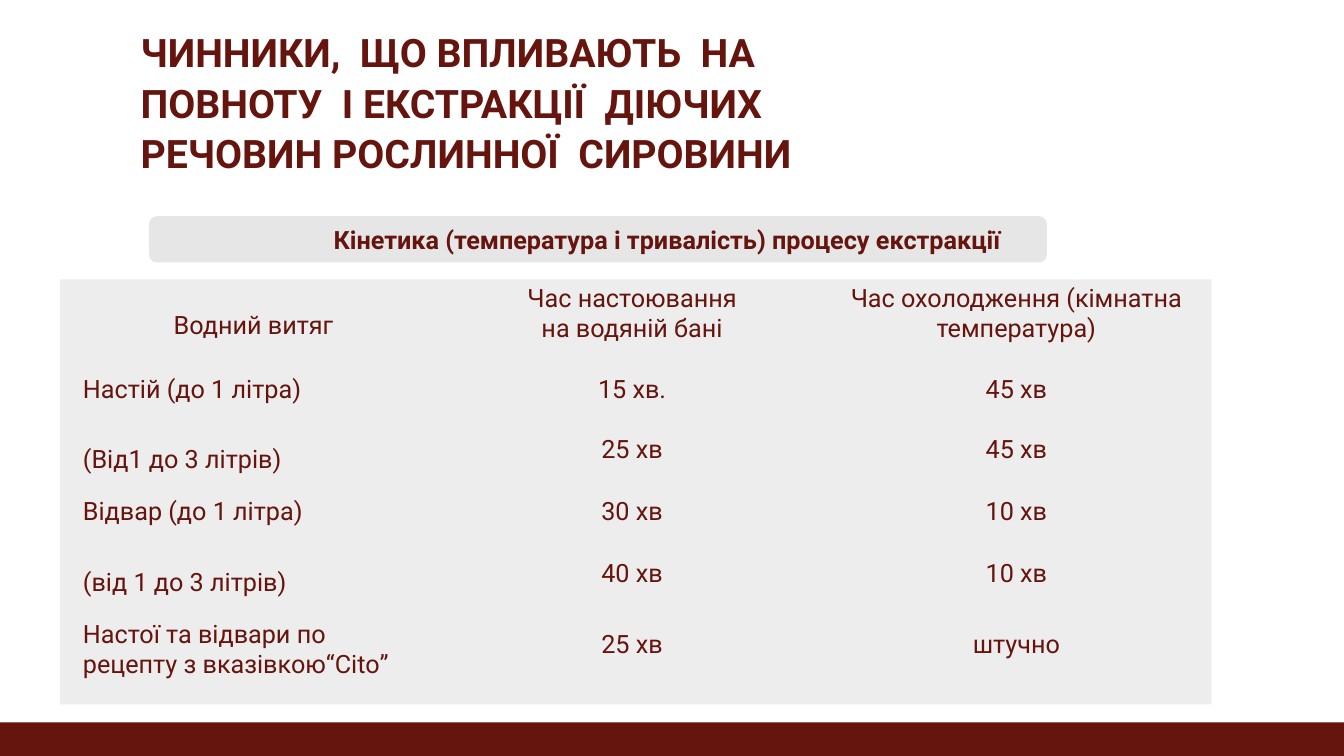
"""Build a slide on the kinetics of extracting active substances from plants."""
from dataclasses import dataclass
from itertools import pairwise

from lxml import etree
from pptx import Presentation
from pptx.dml.color import RGBColor
from pptx.enum.shapes import MSO_SHAPE
from pptx.enum.text import MSO_ANCHOR, PP_ALIGN
from pptx.oxml.ns import qn
from pptx.util import Emu, Pt

RECTANGLE = MSO_SHAPE.RECTANGLE
ROUNDED = MSO_SHAPE.ROUNDED_RECTANGLE
TOP, MIDDLE = MSO_ANCHOR.TOP, MSO_ANCHOR.MIDDLE
LEFT, CENTER = PP_ALIGN.LEFT, PP_ALIGN.CENTER
EMU_PER_PX = 9525
NO_GRID_STYLE = "{2D5ABB26-0587-4C30-8999-92F81FD0307C}"


@dataclass(frozen=True)
class Theme:
    """Colours, typeface and type sizes of the slide."""
    maroon: RGBColor = RGBColor(0x65, 0x14, 0x0E)
    banner: RGBColor = RGBColor(0xE7, 0xE6, 0xE6)
    panel: RGBColor = RGBColor(0xE6, 0xE6, 0xE6)
    panel_opacity: int = 70
    typeface: str = "Roboto"
    title_size: int = 28
    title_leading: int = 36
    body_size: int = 18


@dataclass(frozen=True)
class Area:
    """A rectangle on the slide in px."""
    left: int
    top: int
    width: int
    height: int

    def emu(self):
        """Return the four lengths in EMU."""
        return [px(value) for value in (self.left, self.top, self.width, self.height)]


@dataclass(frozen=True)
class TableRow:
    """Texts of one row, its top edge and the insets above its label and values."""
    top: int
    label_inset: int
    value_inset: int
    texts: tuple[str, str, str]


THEME = Theme()
TITLE = ("ЧИННИКИ,  ЩО ВПЛИВАЮТЬ  НА  ПОВНОТУ  І ЕКСТРАКЦІЇ  ДІЮЧИХ "
         "РЕЧОВИН РОСЛИННОЇ  СИРОВИНИ")
SUBTITLE = "Кінетика (температура і тривалість) процесу екстракції"
SLIDE = Area(0, 0, 1280, 720)
TITLE_AREA = Area(134, 24, 690, 144)
BANNER_AREA = Area(142, 206, 855, 44)
BANNER_INDENT = 132
PANEL_AREA = Area(57, 266, 1097, 405)
FOOTER_AREA = Area(0, 688, 1280, 32)
COLUMN_EDGES = (57, 426, 778, 1158)
CELL_SIDE_MARGIN = 22
ROWS = (
    TableRow(266, 30, 5, ("Водний витяг", "Час настоювання\nна водяній бані",
                          "Час охолодження (кімнатна\vтемпература)")),
    TableRow(351, 6, 6, ("Настій (до 1 літра)", "15 хв.", "45 хв")),
    TableRow(412, 12, 3, ("(Від1 до 3 літрів)", "25 хв", "45 хв")),
    TableRow(469, 5, 5, ("Відвар (до 1 літра)", "30 хв", "10 хв")),
    TableRow(529, 12, 4, ("(від 1 до 3 літрів)", "40 хв", "10 хв")),
    TableRow(587, 4, 13, ("Настої та відвари по рецепту з вказівкою“Cito”",
                          "25 хв", "штучно")),
)


def px(value: int) -> Emu:
    """Turn px into EMU."""
    return Emu(value * EMU_PER_PX)


def format_text(frame, size: int, alignment, bold: bool = False) -> None:
    """Apply the theme's type to every paragraph of a text frame."""
    for para in frame.paragraphs:
        para.alignment = alignment
        for span in para.runs:
            span.font.name = THEME.typeface
            span.font.size = Pt(size)
            span.font.bold = bold
            span.font.color.rgb = THEME.maroon


def add_block(page, kind, area: Area, color: RGBColor):
    """Add a flat filled shape without outline or shadow."""
    block = page.shapes.add_shape(kind, *area.emu())
    block.shadow.inherit = False
    block.fill.solid()
    block.fill.fore_color.rgb = color
    block.line.fill.background()
    return block


def add_title(page) -> None:
    """Add the heading with exact line spacing."""
    frame = page.shapes.add_textbox(*TITLE_AREA.emu()).text_frame
    frame.word_wrap = True
    frame.vertical_anchor = TOP
    frame.margin_left = frame.margin_right = 0
    frame.margin_top = frame.margin_bottom = 0
    frame.text = TITLE
    frame.paragraphs[0].line_spacing = Pt(THEME.title_leading)
    format_text(frame, THEME.title_size, LEFT, bold=True)


def add_banner(page) -> None:
    """Add the rounded subtitle banner."""
    banner = add_block(page, ROUNDED, BANNER_AREA, THEME.banner)
    frame = banner.text_frame
    frame.word_wrap = True
    frame.vertical_anchor = MIDDLE
    frame.margin_left, frame.margin_right = px(BANNER_INDENT), 0
    frame.margin_top = frame.margin_bottom = 0
    frame.text = SUBTITLE
    format_text(frame, THEME.body_size, CENTER, bold=True)


def add_panel(page) -> None:
    """Add the translucent panel behind the table."""
    panel = add_block(page, RECTANGLE, PANEL_AREA, THEME.panel)
    color = panel._element.spPr.find(".//" + qn("a:srgbClr"))
    alpha = etree.SubElement(color, qn("a:alpha"))
    alpha.set("val", str(THEME.panel_opacity * 1000))


def add_times_table(page) -> None:
    """Add the table of infusion and cooling times."""
    width = COLUMN_EDGES[-1] - COLUMN_EDGES[0]
    area = Area(COLUMN_EDGES[0], PANEL_AREA.top, width, PANEL_AREA.height)
    table = page.shapes.add_table(len(ROWS), len(COLUMN_EDGES) - 1, *area.emu()).table
    table.first_row = table.horz_banding = False
    table._tbl.find(".//" + qn("a:tableStyleId")).text = NO_GRID_STYLE
    for column, (start, end) in zip(table.columns, pairwise(COLUMN_EDGES)):
        column.width = px(end - start)
    row_edges = [row.top for row in ROWS] + [area.top + area.height]
    for line, (start, end) in zip(table.rows, pairwise(row_edges)):
        line.height = px(end - start)
    for row_index, row in enumerate(ROWS):
        for column_index, text in enumerate(row.texts):
            cell = table.cell(row_index, column_index)
            is_label = column_index == 0
            cell.fill.background()
            cell.vertical_anchor = TOP
            cell.margin_left = cell.margin_right = px(CELL_SIDE_MARGIN)
            cell.margin_top = px(row.label_inset if is_label else row.value_inset)
            cell.margin_bottom = 0
            cell.text = text
            alignment = LEFT if is_label and row_index > 0 else CENTER
            format_text(cell.text_frame, THEME.body_size, alignment)


def main() -> None:
    """Build and save the deck."""
    deck = Presentation()
    deck.slide_width, deck.slide_height = px(SLIDE.width), px(SLIDE.height)
    page = deck.slides.add_slide(deck.slide_layouts[6])
    add_block(page, RECTANGLE, FOOTER_AREA, THEME.maroon)
    add_banner(page)
    add_panel(page)
    add_times_table(page)
    add_title(page)
    deck.save("out.pptx")


if __name__ == "__main__":
    main()
